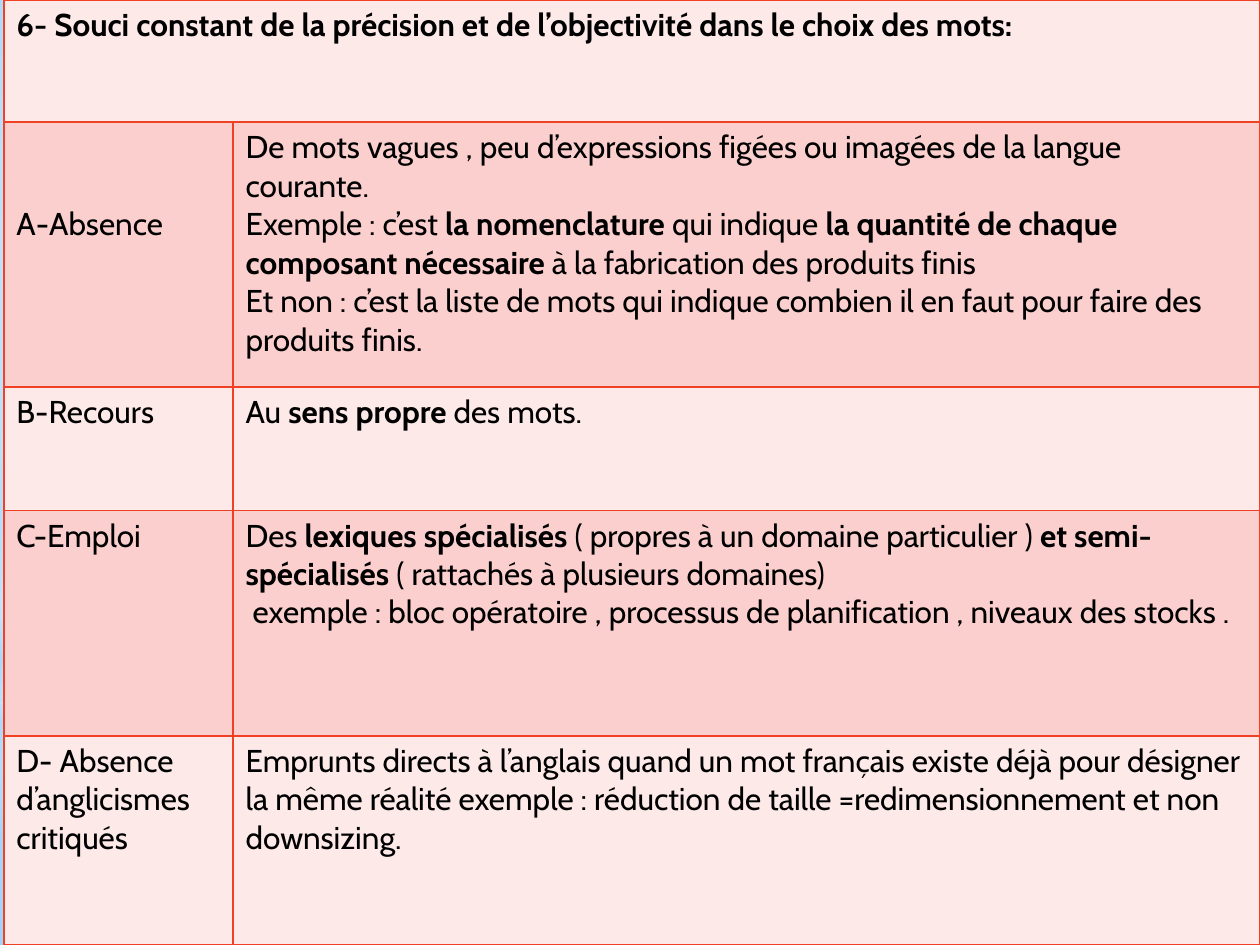
from lxml.etree import SubElement
from pptx import Presentation
from pptx.dml.color import RGBColor
from pptx.enum.shapes import MSO_SHAPE
from pptx.oxml.ns import qn
from pptx.util import Inches, Pt

FONT = "Cabin"
TEXT_SIZE = 18
INK = "000000"
BORDER = "F14124"
WHITE = "FFFFFF"
SKY = "B4DCFA"
ROW_FILLS = ["FCE9E8", "FACFCD"]
COLUMN_WIDTHS = [1.82, 8.15]
ROW_HEIGHTS = [0.97, 2.1, 0.98, 1.79, 1.66]
LABEL_OFFSET = 0.66
CENTER = (50, 50, 50, 50)

PAGE_STOPS = [(0, "9ED5FF", 100), (60, WHITE, 100), (100, "5BB9FF", 100)]
PAGE_FOCUS = (20, 10, 20, 60)
BACKDROP = [
    (MSO_SHAPE.RECTANGLE, 5.58, 1.92, CENTER,
     [(0, WHITE, 91), (37, WHITE, 76), (100, SKY, 79)]),
    (MSO_SHAPE.RECTANGLE, 0, 5.58, CENTER,
     [(0, WHITE, 89), (48, WHITE, 62), (100, SKY, 79)]),
    (MSO_SHAPE.RECTANGLE, 4.12, 2.5, None,
     [(0, WHITE, 0), (29, WHITE, 30), (45, SKY, 40),
      (55, WHITE, 26), (65, SKY, 60), (100, WHITE, 0)]),
    (MSO_SHAPE.OVAL, 1.75, 5.58, CENTER, [(0, WHITE, 100), (56, WHITE, 0)]),
]

TITLE = "**6- Souci constant de la précision et de l’objectivité dans le choix des mots:**"
ROWS = [
    ("A-Absence", [
        "De mots vagues , peu d’expressions figées ou imagées de la langue courante.",
        "Exemple : c’est **la nomenclature **qui indique **la quantité de chaque "
        "composant nécessaire** à la fabrication des produits finis",
        "Et non : c’est la liste de mots qui indique combien il en faut pour faire "
        "des produits finis.",
    ]),
    ("B-Recours", ["Au **sens propre **des mots."]),
    ("C-Emploi", [
        "Des **lexiques spécialisés **( propres à un domaine particulier ) "
        "**et semi-spécialisés** ( rattachés à plusieurs domaines)",
        " exemple : bloc opératoire , processus de planification , niveaux des stocks .",
    ]),
    ("D- Absence d’anglicismes critiqués", [
        "Emprunts directs à l’anglais quand un mot français existe déjà pour désigner "
        "la même réalité exemple : réduction de taille =redimensionnement et non "
        "downsizing.",
    ]),
]


def color(value):
    return RGBColor.from_string(value)


def apply_gradient(holder, stops, focus):
    gradient = SubElement(holder, qn("a:gradFill"), rotWithShape="1")
    stop_list = SubElement(gradient, qn("a:gsLst"))
    for position, value, opacity in stops:
        stop = SubElement(stop_list, qn("a:gs"), pos=str(position * 1000))
        tint = SubElement(stop, qn("a:srgbClr"), val=value)
        SubElement(tint, qn("a:alpha"), val=str(opacity * 1000))
    if focus:
        radial = SubElement(gradient, qn("a:path"))
        radial.set("path", "circle")
        edges = {side: str(share * 1000) for side, share in zip("ltrb", focus)}
        SubElement(radial, qn("a:fillToRect"), edges)
    else:
        SubElement(gradient, qn("a:lin"), ang="5400000", scaled="0")
    holder.replace(holder.find(qn("a:solidFill")), gradient)


def add_backdrop(page, left, width):
    page.background.fill.solid()
    apply_gradient(page._element.cSld.find(f"{qn('p:bg')}/{qn('p:bgPr')}"),
                   PAGE_STOPS, PAGE_FOCUS)
    for outline, top, height, focus, stops in BACKDROP:
        shape = page.shapes.add_shape(
            outline, Inches(left), Inches(top), Inches(width), Inches(height))
        shape.shadow.inherit = False
        shape.line.fill.background()
        shape.fill.solid()
        apply_gradient(shape._element.spPr, stops, focus)


def write_paragraph(para, marked_text):
    for index, part in enumerate(marked_text.split("**")):
        if part:
            span = para.add_run()
            span.text = part
            span.font.name = FONT
            span.font.size = Pt(TEXT_SIZE)
            span.font.bold = index % 2 == 1
            span.font.color.rgb = color(INK)


def write_cell(cell, paragraphs):
    frame = cell.text_frame
    for index, marked_text in enumerate(paragraphs):
        para = frame.add_paragraph() if index else frame.paragraphs[0]
        write_paragraph(para, marked_text)


def style_cell(cell, fill):
    properties = cell._tc.get_or_add_tcPr()
    for side in ("a:lnL", "a:lnR", "a:lnT", "a:lnB"):
        line = SubElement(properties, qn(side), w=str(Pt(1)))
        solid = SubElement(line, qn("a:solidFill"))
        SubElement(solid, qn("a:srgbClr"), val=BORDER)
    cell.fill.solid()
    cell.fill.fore_color.rgb = color(fill)


def add_word_choice_table(page, left, top, width, height):
    frame = page.shapes.add_table(
        len(ROW_HEIGHTS), len(COLUMN_WIDTHS),
        Inches(left), Inches(top), Inches(width), Inches(height))
    table = frame.table
    for column, column_width in zip(table.columns, COLUMN_WIDTHS):
        column.width = Inches(column_width)
    for index, (row, row_height) in enumerate(zip(table.rows, ROW_HEIGHTS)):
        row.height = Inches(row_height)
        for cell in row.cells:
            style_cell(cell, ROW_FILLS[index % 2])

    table.cell(0, 0).merge(table.cell(0, 1))
    write_cell(table.cell(0, 0), [TITLE])
    for index, (label, paragraphs) in enumerate(ROWS, start=1):
        write_cell(table.cell(index, 0), [label])
        write_cell(table.cell(index, 1), paragraphs)
    table.cell(1, 0).margin_top = Inches(LABEL_OFFSET)


def main():
    deck = Presentation()
    deck.slide_width = Inches(10)
    deck.slide_height = Inches(7.5)
    page = deck.slides.add_slide(deck.slide_layouts[6])
    add_backdrop(page, 0, 10)
    add_word_choice_table(page, 0.03, 0, sum(COLUMN_WIDTHS), sum(ROW_HEIGHTS))
    deck.save("out.pptx")


if __name__ == "__main__":
    main()
